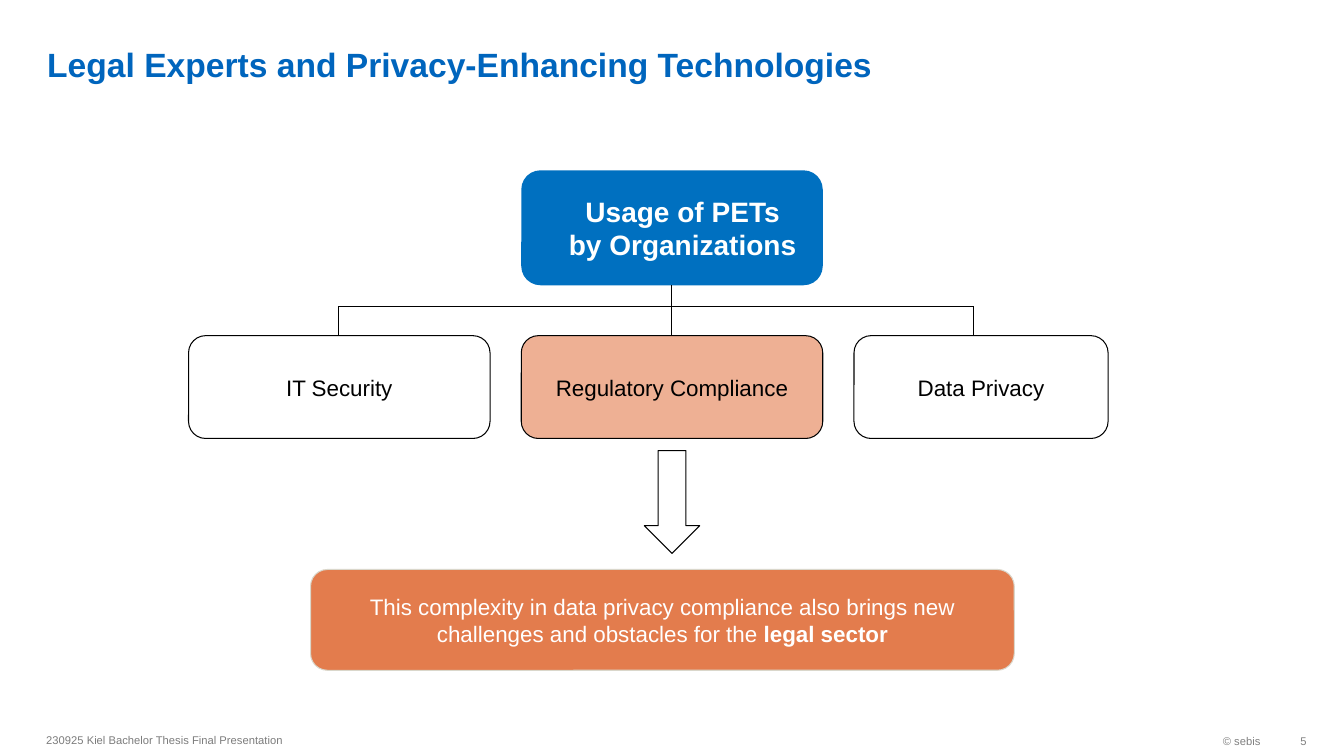
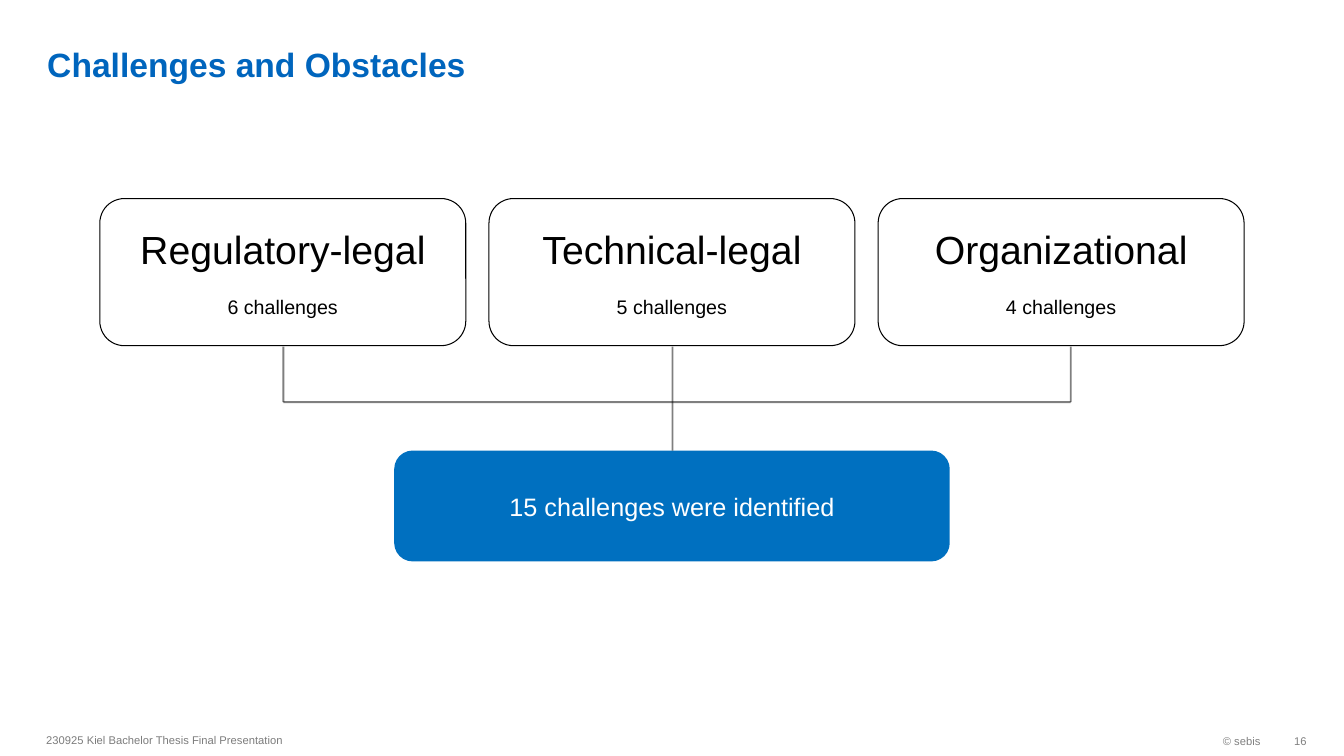
from dataclasses import dataclass

import pptx
import pptx.dml.color
import pptx.enum.shapes
import pptx.enum.text
import pptx.oxml.ns
import pptx.oxml.xmlchemy
import pptx.util

PX = 9144  # EMU per px, 100 px to the inch


@dataclass(frozen=True)
class Theme:
    font: str = "Arial"
    title: str = "0065BD"
    blue: str = "0070C0"
    orange: str = "E37C4D"
    peach: str = "EEB094"
    beige: str = "DAD7CB"
    black: str = "000000"
    white: str = "FFFFFF"
    footer: str = "7C7C7C"
    footer_right: str = "808080"
    title_size: int = 24
    category_size: int = 28
    root_size: int = 20
    result_size: int = 18
    body_size: int = 16
    count_size: int = 14
    footer_size: int = 8
    outline: float = 0.75
    bracket: float = 1.35


theme = Theme()
rgb = pptx.dml.color.RGBColor.from_string
new_element = pptx.oxml.xmlchemy.OxmlElement
Align = pptx.enum.text.PP_ALIGN
Anchor = pptx.enum.text.MSO_ANCHOR
Preset = pptx.enum.shapes.MSO_SHAPE


def add_box(slide, frame, lines=(), color=theme.black, preset=None, fill=None,
            outline=None, align=Align.CENTER, anchor=Anchor.MIDDLE,
            insets=(10, 5, 10, 5), bold=False):
    """Add a preset shape, or a text box without preset; lines are (text, size)."""
    frame = [length * PX for length in frame]
    if preset is None:
        shape = slide.shapes.add_textbox(*frame)
    else:
        shape = slide.shapes.add_shape(preset, *frame)
        shape.shadow.inherit = False
        if fill:
            shape.fill.solid()
            shape.fill.fore_color.rgb = rgb(fill)
        else:
            shape.fill.background()
        if outline:
            shape.line.color.rgb = rgb(outline)
            shape.line.width = pptx.util.Pt(theme.outline)
        else:
            shape.line.fill.background()
    text = shape.text_frame
    text.word_wrap = True
    text.vertical_anchor = anchor
    text.margin_left, text.margin_top, text.margin_right, text.margin_bottom = [
        inset * PX for inset in insets]
    for index, (words, size) in enumerate(lines):
        paragraph = text.add_paragraph() if index else text.paragraphs[0]
        paragraph.text = words
        paragraph.alignment = align
        if index:
            paragraph.space_before = pptx.util.Pt(16)
        paragraph.font.name = theme.font
        paragraph.font.size = pptx.util.Pt(size)
        paragraph.font.bold = bold
        paragraph.font.color.rgb = rgb(color)
    return shape


def add_line(slide, ends, width, opacity=100):
    line = slide.shapes.add_connector(
        pptx.enum.shapes.MSO_CONNECTOR.STRAIGHT, *[end * PX for end in ends])
    line.line.color.rgb = rgb(theme.black)
    line.line.width = pptx.util.Pt(width)
    properties = line._element.spPr
    if opacity < 100:
        color = properties.find(".//" + pptx.oxml.ns.qn("a:srgbClr"))
        alpha = new_element("a:alpha")
        alpha.set("val", str(opacity * 1000))
        color.append(alpha)
    properties.append(new_element("a:effectLst"))


presentation = pptx.Presentation()
presentation.slide_width = 1333 * PX
presentation.slide_height = 750 * PX

# Title and footer of each slide
slides = []
for title, number in (("Legal Experts and Privacy-Enhancing Technologies", "5"),
                      ("Challenges and Obstacles", "16")):
    slide = presentation.slides.add_slide(presentation.slide_layouts[6])
    slides.append(slide)
    add_box(slide, (37, 5, 1158, 79), [(title, theme.title_size)], theme.title,
            align=Align.LEFT, anchor=Anchor.BOTTOM, insets=(10, 0, 10, 0), bold=True)
    add_box(slide, (36, 718, 630, 32),
            [("230925 Kiel Bachelor Thesis Final Presentation", theme.footer_size)],
            theme.footer, align=Align.LEFT)
    add_box(slide, (1026, 719, 234, 32), [("© sebis", theme.footer_size)],
            theme.footer_right, align=Align.RIGHT)
    add_box(slide, (1260, 719, 36, 32), [(number, theme.footer_size)],
            theme.footer_right, align=Align.RIGHT, insets=(10, 5, 0, 5))
experts, challenges = slides

# Usage of PETs: root, branches and areas
add_box(experts, (517, 169, 299, 114),
        [("Usage of PETs\vby Organizations", theme.root_size)], theme.white,
        Preset.ROUNDED_RECTANGLE, theme.blue, insets=(31, 5, 10, 5), bold=True)
areas = (("IT Security", 299, None),
         ("Regulatory Compliance", 299, theme.peach),
         ("Data Privacy", 252, None))
for index, (name, width, fill) in enumerate(areas):
    add_box(experts, (187 + 330 * index, 333, width, 102), [(name, theme.body_size)],
            preset=Preset.ROUNDED_RECTANGLE, fill=fill, outline=theme.black)
for ends in ((336, 304, 966, 304), (666, 283, 666, 333),
             (336, 304, 336, 333), (966, 304, 966, 333)):
    add_line(experts, ends, theme.outline)

# Consequence for the legal sector
add_box(experts, (639, 447, 55, 102), preset=Preset.DOWN_ARROW, outline=theme.black)
consequence = add_box(
    experts, (308, 565, 698, 100),
    [("This complexity in data privacy compliance also brings new challenges "
      "and obstacles for the ", theme.body_size)],
    theme.white, Preset.ROUNDED_RECTANGLE, theme.orange, theme.beige)
emphasis = consequence.text_frame.paragraphs[0].add_run()
emphasis.text = "legal sector"
emphasis.font.bold = True

# Challenge categories
categories = (("Regulatory-legal", 6), ("Technical-legal", 5), ("Organizational", 4))
for index, (name, count) in enumerate(categories):
    add_box(challenges, (99 + 386 * index, 197, 363, 146),
            [(name, theme.category_size), (f"{count} challenges", theme.count_size)],
            preset=Preset.ROUNDED_RECTANGLE, fill=theme.white, outline=theme.black)

# Bracket down to the total
add_box(challenges, (391, 447, 551, 110),
        [("15 challenges were identified", theme.result_size)], theme.white,
        Preset.ROUNDED_RECTANGLE, theme.blue)
for ends in ((281, 344, 281, 399), (1062, 344, 1062, 399),
             (281, 399, 1062, 399), (667, 344, 667, 447)):
    add_line(challenges, ends, theme.bracket, opacity=50)

presentation.save("out.pptx")
